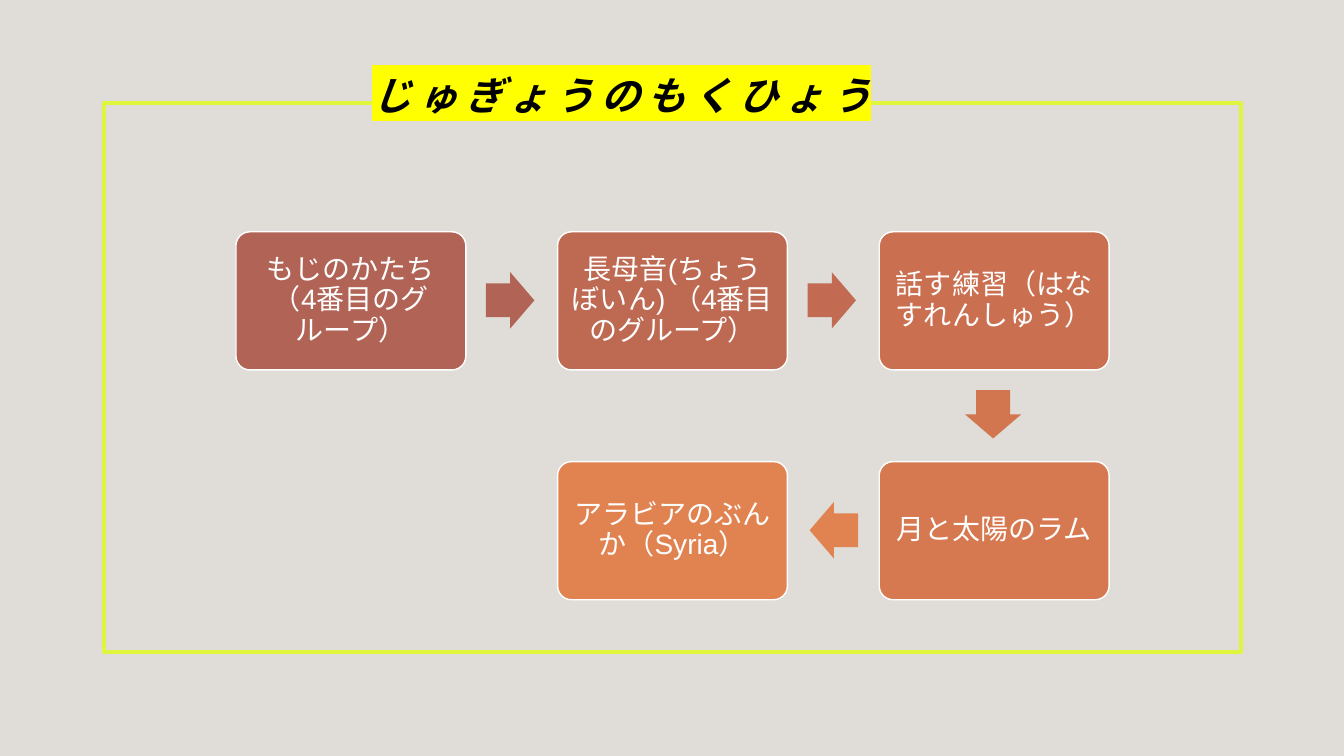
from lxml.etree import SubElement
from pptx import Presentation
from pptx.dml.color import RGBColor
from pptx.enum.shapes import MSO_SHAPE as Shape
from pptx.enum.text import MSO_ANCHOR as Anchor, MSO_AUTO_SIZE as AutoSize, PP_ALIGN as Align
from pptx.oxml.ns import qn
from pptx.util import Inches, Pt

COLORS = {"background": "E0DDD8", "frame": "E0F53D", "highlight": "FFFF00",
          "title": "000000", "white": "FFFFFF"}
BOX_WIDTH, BOX_HEIGHT = 2.28, 1.37
ARROW_WIDTH, ARROW_HEIGHT = 0.48, 0.56
COLUMNS = [2.34 + 3.19 * column for column in range(3)]
ROWS = [2.3, 4.58]


def write_text(shape, text, size, color, align, anchor, spacing,
               inset=(0.1, 0.05), bold=False, italic=False, after=0):
    frame = shape.text_frame
    frame.word_wrap = True
    frame.auto_size = AutoSize.NONE
    frame.vertical_anchor = anchor
    frame.margin_left = frame.margin_right = Inches(inset[0])
    frame.margin_top = frame.margin_bottom = Inches(inset[1])
    paragraph = frame.paragraphs[0]
    paragraph.alignment = align
    paragraph.line_spacing = spacing
    paragraph.space_before = Pt(0)
    paragraph.space_after = Pt(after)
    run = paragraph.add_run()
    run.text = text
    run.font.size = Pt(size)
    run.font.bold = bold
    run.font.italic = italic
    run.font.color.rgb = RGBColor.from_string(color)
    run.font.name = "Arial"
    return run


def add_block(kind, left, top, width, height, fill=None, line=None, line_width=1):
    shape = slide.shapes.add_shape(kind, Inches(left), Inches(top), Inches(width), Inches(height))
    shape.shadow.inherit = False
    if fill:
        shape.fill.solid()
        shape.fill.fore_color.rgb = RGBColor.from_string(fill)
    else:
        shape.fill.background()
    if line:
        shape.line.color.rgb = RGBColor.from_string(line)
        shape.line.width = Pt(line_width)
    else:
        shape.line.fill.background()
    return shape


presentation = Presentation()
presentation.slide_width = Inches(13.33)
presentation.slide_height = Inches(7.5)
slide = presentation.slides.add_slide(presentation.slide_layouts[5])
slide.background.fill.solid()
slide.background.fill.fore_color.rgb = RGBColor.from_string(COLORS["background"])

border = add_block(Shape.RECTANGLE, 1.03, 1.02, 11.28, 5.45, line=COLORS["frame"], line_width=3)

title = slide.shapes.title
title.left, title.top, title.width, title.height = map(Inches, (3.59, 0.56, 5.52, 1.28))
title_run = write_text(title, "じゅぎょうのもくひょう", 28, COLORS["title"], Align.LEFT, Anchor.TOP,
                       1.2, bold=True, italic=True, after=6)
properties = title_run.font._element
properties.set("spc", "500")
highlight = SubElement(properties, qn("a:highlight"))
SubElement(highlight, qn("a:srgbClr"), val=COLORS["highlight"])
properties.find(qn("a:solidFill")).addnext(highlight)
title.element.addprevious(border.element)

steps = [
    ("もじのかたち（4番目のグループ）", 0, 0, "B16455"),
    ("長母音(ちょうぼいん) （4番目のグループ）", 1, 0, "BE6952"),
    ("話す練習（はなすれんしゅう）", 2, 0, "CA7051"),
    ("月と太陽のラム", 2, 1, "D67950"),
    ("アラビアのぶんか（Syria）", 1, 1, "E08350"),
]
for text, column, row, fill in steps:
    box = add_block(Shape.ROUNDED_RECTANGLE, COLUMNS[column], ROWS[row], BOX_WIDTH, BOX_HEIGHT,
                    fill, COLORS["white"])
    box.adjustments[0] = 0.1
    write_text(box, text, 20, COLORS["white"], Align.CENTER, Anchor.MIDDLE, 0.9, inset=(0.08, 0.08))

arrows = [
    (4.82, 2.7, 0, "B16455"),
    (8.01, 2.7, 0, "C26B52"),
    (9.61, 3.83, 90, "D27650"),
    (8.03, 4.98, 180, "E08350"),
]
for left, top, rotation, fill in arrows:
    arrow = add_block(Shape.RIGHT_ARROW, left, top, ARROW_WIDTH, ARROW_HEIGHT, fill)
    arrow.adjustments[0] = 0.6
    arrow.adjustments[1] = 0.5
    arrow.rotation = rotation

presentation.save("out.pptx")
